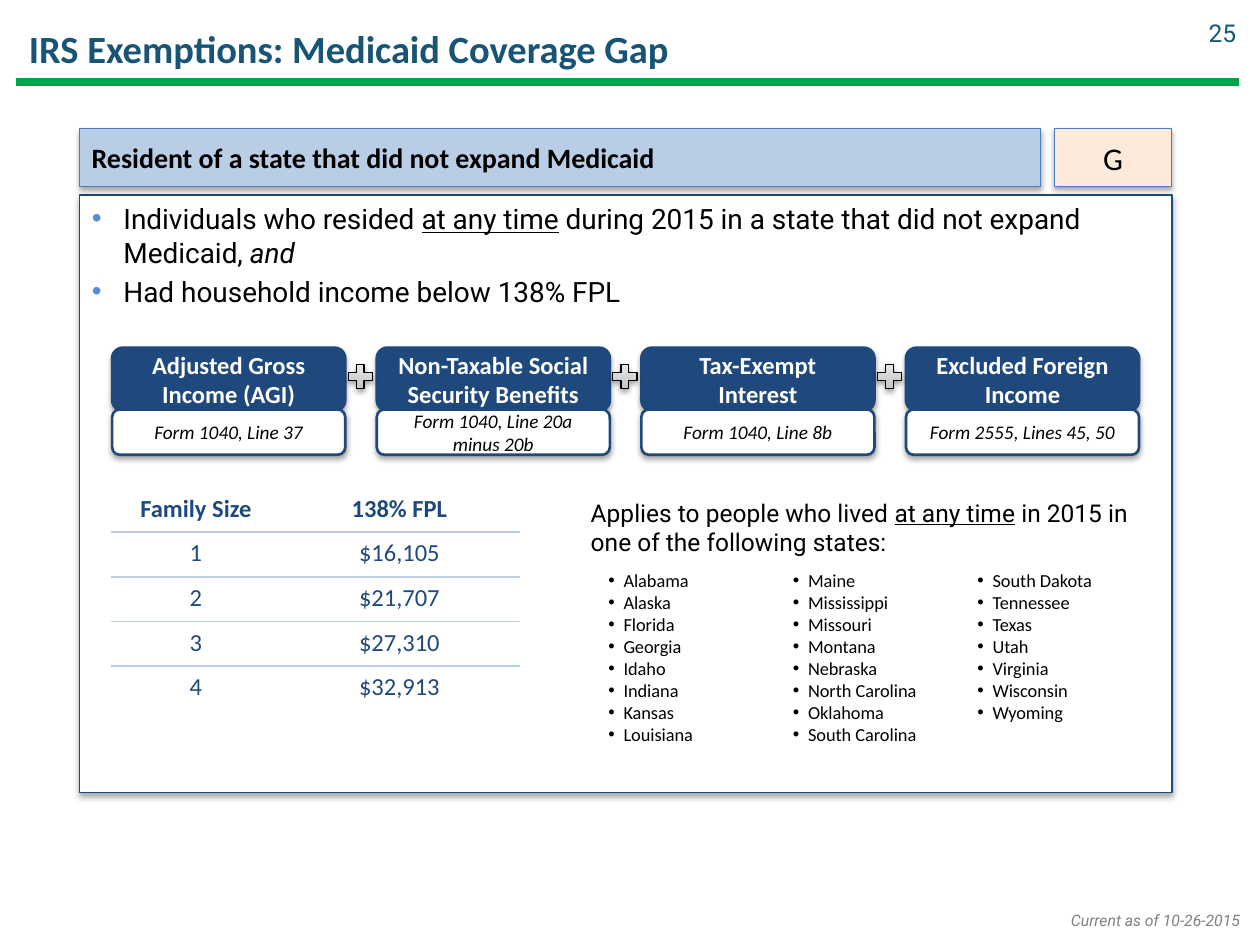
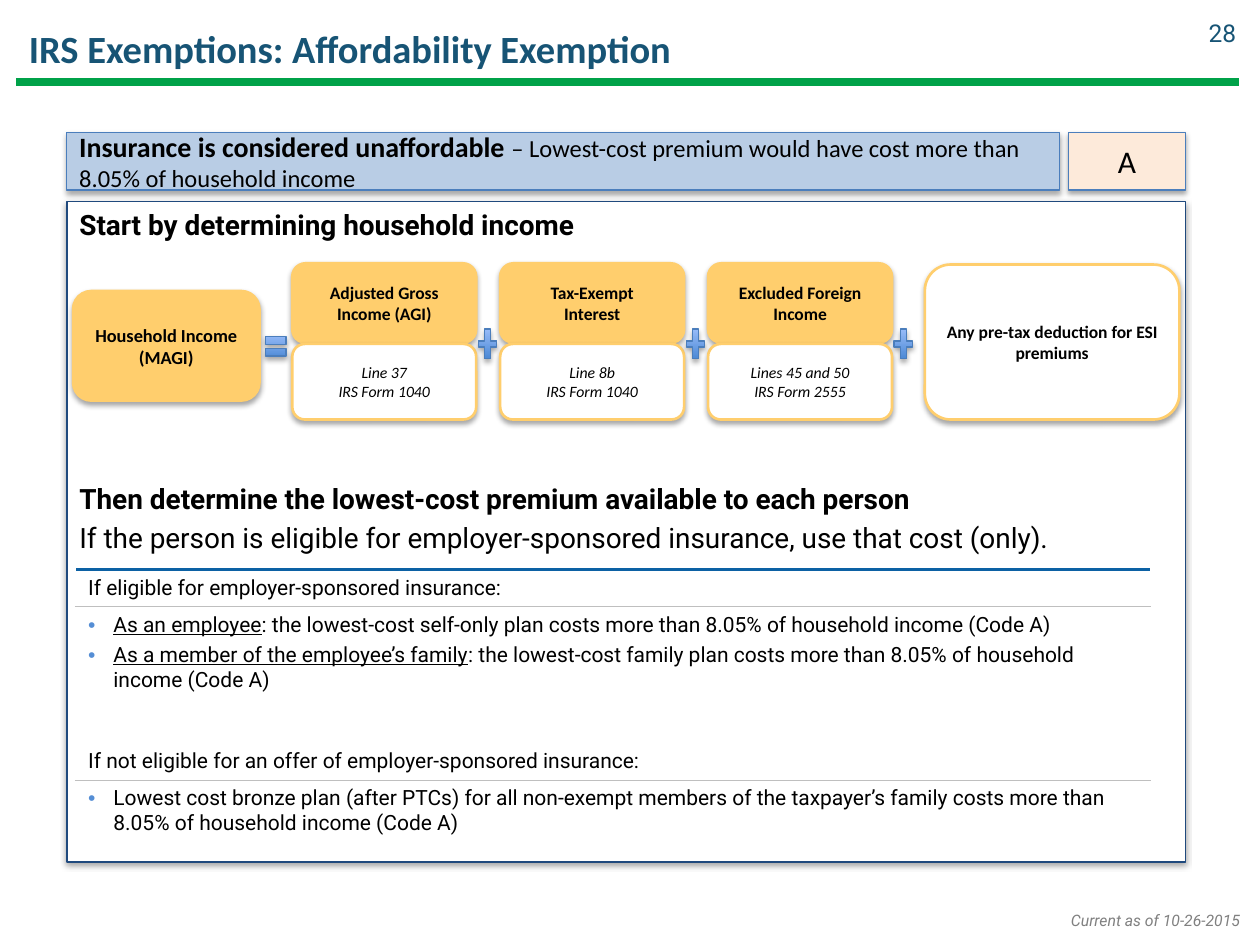
from dataclasses import dataclass, field
from typing import NamedTuple, Optional

import pptx
import pptx.util
import pptx.dml.color
import pptx.enum.shapes
import pptx.enum.text
import pptx.oxml
import pptx.oxml.ns
from lxml import etree

Inches, Pt = pptx.util.Inches, pptx.util.Pt
RGBColor = pptx.dml.color.RGBColor
SHAPE = pptx.enum.shapes.MSO_SHAPE
ALIGN = pptx.enum.text.PP_ALIGN
ANCHOR = pptx.enum.text.MSO_ANCHOR
qn = pptx.oxml.ns.qn

# Colours
BLACK, WHITE = RGBColor(0, 0, 0), RGBColor(255, 255, 255)
TEAL = RGBColor(0x17, 0x54, 0x75)
GREEN = RGBColor(0x00, 0xA2, 0x49)
GREY = RGBColor(0x80, 0x80, 0x80)
NAVY = RGBColor(0x1F, 0x49, 0x7D)
EDGE_BLUE = RGBColor(0x4B, 0x7E, 0xBC)
PALE_BLUE = RGBColor(0xB9, 0xCD, 0xE5)
PEACH = RGBColor(0xFD, 0xEA, 0xDA)
YELLOW = RGBColor(0xFF, 0xCE, 0x6D)
BULLET_BLUE = RGBColor(0x55, 0x8E, 0xD5)
RULE_BLUE = RGBColor(0x0C, 0x61, 0xA4)
RULE_GREY = RGBColor(0xBF, 0xBF, 0xBF)
GREY_GRADIENT = (RGBColor(0xBD, 0xBD, 0xBD), RGBColor(0xEE, 0xEE, 0xEE))
BLUE_GRADIENT = (RGBColor(0x3F, 0x80, 0xCE), RGBColor(0xA4, 0xC4, 0xFF))

# Text formats
TITLE = dict(name="Calibri", size=Pt(22), color=TEAL, bold=True)
NUMBER = dict(name="Roboto", size=Pt(14), color=TEAL)
FOOTER = dict(name="Roboto", size=Pt(9), color=GREY, italic=True)
BODY = dict(name="Roboto", size=Pt(16), color=BLACK)
BAND = dict(name="Calibri", size=Pt(16), color=BLACK, bold=True)
CODE = dict(name="Calibri", size=Pt(18), color=BLACK)
TERM = dict(name="Calibri", size=Pt(10), color=BLACK, bold=True)
DETAIL = dict(name="Calibri", size=Pt(9), color=BLACK, italic=True)
BOLD, UNDERLINE, ITALIC = dict(bold=True), dict(underline=True), dict(italic=True)


class Box(NamedTuple):
    left: float
    top: float
    width: float
    height: float

    def emu(self) -> list:
        return [Inches(v) for v in self]


class Run(NamedTuple):
    text: str
    fmt: dict = {}


@dataclass
class Para:
    runs: list
    align: Optional[ALIGN] = None
    before: float = 0
    after: float = 0
    indent: float = 0
    bullet: Optional[RGBColor] = None


@dataclass
class Term:
    title: list
    detail: list


@dataclass
class TermRow:
    left: float
    top: float
    step: float
    width: float
    title_height: float
    detail_top: float
    detail_height: float
    color: RGBColor
    sign: Box
    sign_colors: tuple
    sign_edge: RGBColor
    signs: int
    title_fmt: dict
    detail_fmt: dict
    terms: list = field(default_factory=list)


# Text and shape helpers
def set_font(font, fmt: dict) -> None:
    for key, value in fmt.items():
        if key == "color":
            font.color.rgb = value
        else:
            setattr(font, key, value)


def set_indent(p, para: Para) -> None:
    pPr = p._p.get_or_add_pPr()
    pPr.set("marL", str(Inches(para.indent)))
    pPr.set("indent", str(-Inches(para.indent)))
    if para.bullet is None:
        etree.SubElement(pPr, qn("a:buNone"))
        return
    color = etree.SubElement(pPr, qn("a:buClr"))
    etree.SubElement(color, qn("a:srgbClr"), val=str(para.bullet))
    etree.SubElement(pPr, qn("a:buFont"), typeface="Arial")
    etree.SubElement(pPr, qn("a:buChar"), char="•")


def write(tf, paras: list, fmt: dict, anchor=ANCHOR.TOP) -> None:
    tf.word_wrap = True
    tf.auto_size = pptx.enum.text.MSO_AUTO_SIZE.NONE
    tf.vertical_anchor = anchor
    fill_paragraphs(tf, paras, fmt)


def fill_paragraphs(tf, paras: list, fmt: dict) -> None:
    for i, para in enumerate(paras):
        p = tf.paragraphs[0] if i == 0 else tf.add_paragraph()
        set_indent(p, para)
        p.alignment = para.align
        p.space_before, p.space_after = Pt(para.before), Pt(para.after)
        for run in para.runs:
            r = p.add_run()
            r.text = run.text
            set_font(r.font, {**fmt, **run.fmt})


def lines(texts: list, align=ALIGN.CENTER) -> list:
    return [Para([Run(text)], align) for text in texts]


def add_text(s, box: Box, paras: list, fmt: dict, anchor=ANCHOR.TOP):
    sp = s.shapes.add_textbox(*box.emu())
    write(sp.text_frame, paras, fmt, anchor)
    return sp


def style_shape(sp, fill, edge: RGBColor, weight: float) -> None:
    if isinstance(fill, RGBColor):
        sp.fill.solid()
        sp.fill.fore_color.rgb = fill
    else:
        sp.fill.gradient()
        sp.fill.gradient_angle = 90
        for stop, color in zip(sp.fill.gradient_stops, fill):
            stop.color.rgb = color
    sp.line.color.rgb = edge
    sp.line.width = Pt(weight)
    sp.shadow.inherit = False
    effects = sp._element.spPr.find(qn("a:effectLst"))
    shadow = etree.SubElement(effects, qn("a:outerShdw"), blurRad=str(Pt(3.1)),
                              dist=str(Pt(1.8)), dir="5400000", rotWithShape="0")
    color = etree.SubElement(shadow, qn("a:srgbClr"), val=str(BLACK))
    etree.SubElement(color, qn("a:alpha"), val="35000")


def add_block(s, kind, box: Box, fill, edge: RGBColor, weight: float,
              paras: list = (), fmt: Optional[dict] = None):
    sp = s.shapes.add_shape(kind, *box.emu())
    style_shape(sp, fill, edge, weight)
    if paras:
        write(sp.text_frame, paras, fmt, ANCHOR.MIDDLE)
    return sp


def set_borders(cell, **edges) -> None:
    tcPr = cell._tc.get_or_add_tcPr()
    for i, side in enumerate("LRTB"):
        color, weight = edges.get(side, (WHITE, 1))
        ln = etree.Element(qn(f"a:ln{side}"), w=str(Pt(weight)))
        solid = etree.SubElement(ln, qn("a:solidFill"))
        etree.SubElement(solid, qn("a:srgbClr"), val=str(color))
        tcPr.insert(i, ln)


def add_plain_table(s, box: Box, rows: int, widths: list):
    table = s.shapes.add_table(rows, len(widths), *box.emu()).table
    table.first_row = table.horz_banding = False
    for column, width in zip(table.columns, widths):
        column.width = Inches(width)
    for cell in table.iter_cells():
        cell.fill.solid()
        cell.fill.fore_color.rgb = WHITE
    return table


# Shared parts of both slides
def add_frame(prs, title: str, number: str, panel: Box, body: list,
              band: Box, heading: list, code: str):
    s = prs.slides.add_slide(prs.slide_layouts[1])
    add_text(s, Box(8.31, 7.18, 1.63, 0.25), lines(["Current as of 10-26-2015"], ALIGN.RIGHT), FOOTER)
    rule = s.shapes.add_connector(pptx.enum.shapes.MSO_CONNECTOR.STRAIGHT,
                                  Inches(0.13), Inches(0.65), Inches(9.83), Inches(0.65))
    rule.line.color.rgb = GREEN
    rule.line.width = Pt(4.75)
    etree.SubElement(rule._element.spPr, qn("a:effectLst"))

    head, content = s.shapes.title, s.placeholders[1]
    for sp, box in ((head, Box(0.13, 0.1, 9, 0.57)), (content, panel)):
        sp.left, sp.top, sp.width, sp.height = box.emu()
    write(head.text_frame, lines([title], ALIGN.LEFT), TITLE, ANCHOR.MIDDLE)
    style_shape(content, WHITE, NAVY, 1)
    write(content.text_frame, body, BODY)

    add_text(s, Box(9.4, 0.06, 0.51, 0.4), lines([number], ALIGN.RIGHT), NUMBER, ANCHOR.MIDDLE)
    add_block(s, SHAPE.RECTANGLE, band, PALE_BLUE, EDGE_BLUE, 0.75, [Para(heading, ALIGN.LEFT)], BAND)
    code_box = Box(panel.left + panel.width - 0.93, band.top, 0.93, band.height)
    add_block(s, SHAPE.RECTANGLE, code_box, PEACH, EDGE_BLUE, 0.75, lines([code]), CODE)
    return s


def add_terms(s, row: TermRow) -> None:
    for i, term in enumerate(row.terms):
        left = row.left + i * row.step
        for top, height, fill, texts, fmt in (
                (row.top, row.title_height, row.color, term.title, row.title_fmt),
                (row.detail_top, row.detail_height, WHITE, term.detail, row.detail_fmt)):
            add_block(s, SHAPE.ROUNDED_RECTANGLE, Box(left, top, row.width, height),
                      fill, row.color, 1.5, lines(texts), fmt)
    for i in range(row.signs):
        box = row.sign._replace(left=row.sign.left + i * row.step)
        add_block(s, SHAPE.MATH_PLUS, box, row.sign_colors, row.sign_edge, 0.75)


# Slide: Medicaid coverage gap
def coverage_gap(prs) -> None:
    s = add_frame(
        prs, "IRS Exemptions: Medicaid Coverage Gap", "25", Box(0.63, 1.55, 8.67, 4.74),
        [Para([Run("Individuals who resided "), Run("at any time", UNDERLINE),
               Run(" during 2015 in a state that did not expand Medicaid, "), Run("and", ITALIC)],
              indent=0.25, bullet=BULLET_BLUE),
         Para([Run("Had household income below 138% FPL")], before=3, indent=0.25, bullet=BULLET_BLUE)],
        Box(0.63, 1.02, 7.63, 0.46), [Run("Resident of a state that did not expand Medicaid")], "G")

    # Income limits by family size
    limits = [("Family Size", "138% FPL"), ("1", "$16,105"), ("2", "$21,707"),
              ("3", "$27,310"), ("4", "$32,913")]
    table = add_plain_table(s, Box(0.89, 3.87, 3.23, 1.77), len(limits), [1.33, 1.9])
    blue, white = (PALE_BLUE, 1), (WHITE, 1)
    for i, values in enumerate(limits):
        for cell, value in zip(table.rows[i].cells, values):
            fill_paragraphs(cell.text_frame, lines([value]),
                            dict(name="Calibri", size=Pt(14), color=NAVY, bold=i == 0))
            set_borders(cell, T=blue if i else white, B=blue if i < len(limits) - 1 else white)

    # Parts of household income
    add_terms(s, TermRow(
        0.89, 2.76, 2.1, 1.85, 0.5, 3.25, 0.36, NAVY, Box(2.73, 2.86, 0.26, 0.26),
        GREY_GRADIENT, BLACK, 3, {**TERM, "size": Pt(14), "color": WHITE}, {**DETAIL, "size": Pt(11)},
        [Term(["Adjusted Gross Income (AGI)"], ["Form 1040, Line 37"]),
         Term(["Non-Taxable Social Security Benefits"], ["Form 1040, Line 20a minus 20b"]),
         Term(["Tax-Exempt", "Interest"], ["Form 1040, Line 8b"]),
         Term(["Excluded Foreign Income"], ["Form 2555, Lines 45, 50"])]))

    # States, eight to a column
    add_text(s, Box(4.59, 3.9, 4.67, 0.57),
             [Para([Run("Applies to people who lived "), Run("at any time", UNDERLINE),
                    Run(" in 2015 in one of the following states:")])], {**BODY, "size": Pt(14)})
    states = ["Alabama", "Alaska", "Florida", "Georgia", "Idaho", "Indiana", "Kansas", "Louisiana",
              "Maine", "Mississippi", "Missouri", "Montana", "Nebraska", "North Carolina",
              "Oklahoma", "South Carolina", "South Dakota", "Tennessee", "Texas", "Utah",
              "Virginia", "Wisconsin", "Wyoming"]
    sp = add_text(s, Box(4.73, 4.47, 4.59, 1.55),
                  [Para([Run(state)], indent=0.12, bullet=BLACK) for state in states],
                  dict(name="Calibri", size=Pt(10.5), color=BLACK))
    sp.text_frame._txBody.bodyPr.set("numCol", "3")


# Slide: affordability exemption
def affordability(prs) -> None:
    s = add_frame(
        prs, "IRS Exemptions: Affordability Exemption", "28", Box(0.53, 1.6, 8.88, 5.24),
        [Para([Run("Start by determining household income", BOLD)]),
         Para([Run("Then determine the lowest-cost premium available to each person", BOLD)], before=137),
         Para([Run("If the person is eligible for employer-sponsored insurance, use that cost (only).")],
              before=3)],
        Box(0.53, 1.05, 7.88, 0.46),
        [Run("Insurance is considered unaffordable "),
         Run("– Lowest-cost premium would have cost more than 8.05% of household income",
             dict(size=Pt(14), bold=False))], "A")

    # Household income equation
    add_terms(s, TermRow(
        2.32, 2.09, 1.65, 1.46, 0.63, 2.73, 0.6, YELLOW, Box(3.77, 2.57, 0.2, 0.32),
        BLUE_GRADIENT, EDGE_BLUE, 3, TERM, DETAIL,
        [Term(["Adjusted Gross Income (AGI)"], ["Line 37", "IRS Form 1040"]),
         Term(["Tax-Exempt", "Interest"], ["Line 8b", "IRS Form 1040"]),
         Term(["Excluded Foreign Income"], ["Lines 45 and 50", "IRS Form 2555"])]))
    add_block(s, SHAPE.ROUNDED_RECTANGLE, Box(0.58, 2.31, 1.48, 0.87), YELLOW, YELLOW, 1.5,
              lines(["Household Income (MAGI)"]), {**TERM, "size": Pt(10.5)})
    add_block(s, SHAPE.MATH_EQUAL, Box(2.08, 2.62, 0.22, 0.26), BLUE_GRADIENT, EDGE_BLUE, 0.75)
    add_block(s, SHAPE.ROUNDED_RECTANGLE, Box(7.34, 2.1, 2.02, 1.23), WHITE, YELLOW, 1.5,
              lines(["Any pre-tax deduction for ESI premiums"]), TERM)

    # Premium tests
    tests = [
        (0.27, [[Run("If eligible for employer-sponsored insurance:")]]),
        (1.08, [[Run("As an employee", UNDERLINE),
                 Run(": the lowest-cost self-only plan costs more than 8.05% of household income (Code A)")],
                [Run("As a member of the employee’s family", UNDERLINE),
                 Run(": the lowest-cost family plan costs more than 8.05% of household income (Code A)")]]),
        (0.27, [[Run("If not eligible for an offer of employer-sponsored insurance:")]]),
        (0.53, [[Run("Lowest cost bronze plan (after PTCs) for all non-exempt members of the taxpayer’s "
                     "family costs more than 8.05% of household income (Code A)")]])]
    table = add_plain_table(s, Box(0.6, 4.52, 8.53, 2.15), len(tests), [8.53])
    grey, white = (RULE_GREY, 0.5), (WHITE, 1)
    for i, (height, items) in enumerate(tests):
        table.rows[i].height = Inches(height)
        cell, listed = table.cell(i, 0), i % 2 == 1
        fill_paragraphs(cell.text_frame,
                        [Para(runs, after=3, indent=0.2 * listed, bullet=BULLET_BLUE if listed else None)
                         for runs in items], {**BODY, "size": Pt(12)})
        top = (RULE_BLUE, 1.5) if i == 0 else grey if listed else white
        set_borders(cell, T=top, B=white if listed else grey)


def main() -> None:
    prs = pptx.Presentation()
    prs.slide_width, prs.slide_height = Inches(10), Inches(7.5)
    coverage_gap(prs)
    affordability(prs)
    prs.save("out.pptx")


if __name__ == "__main__":
    main()
